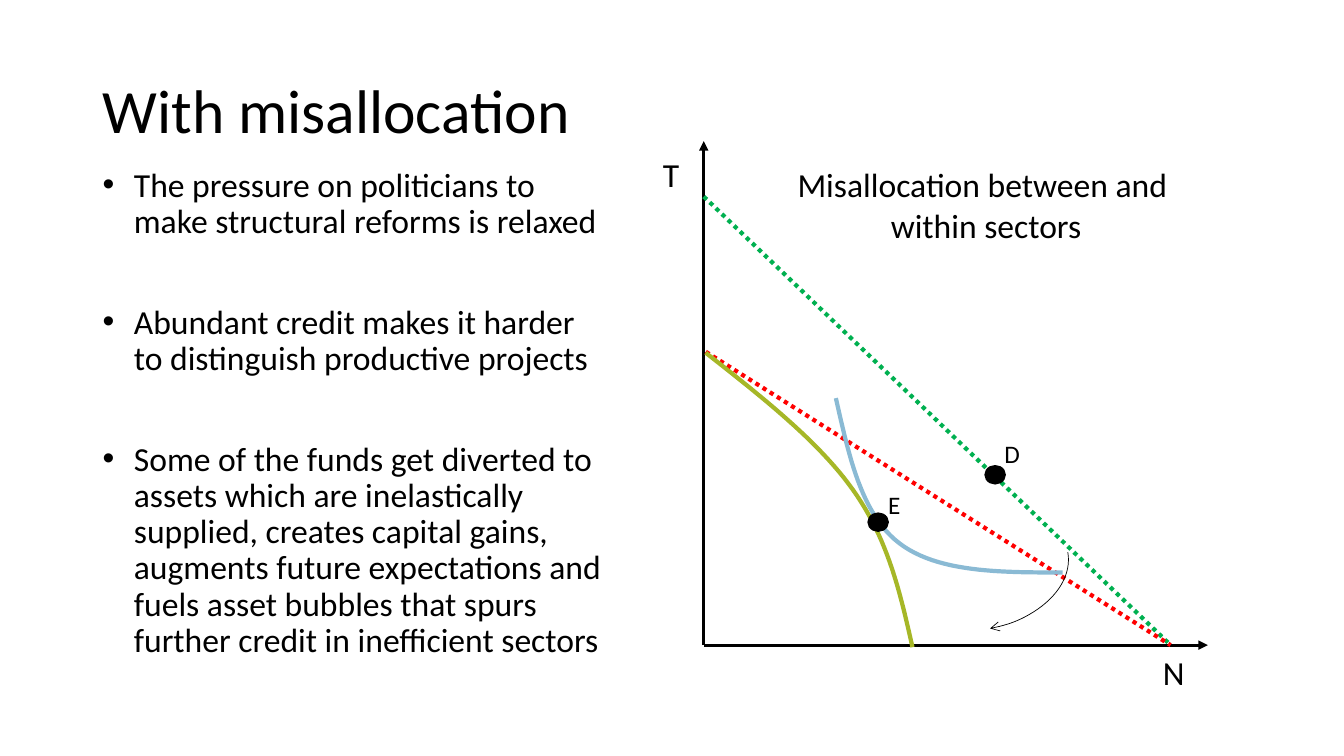
import lxml.etree
import pptx
import pptx.dml.color
import pptx.enum.dml
import pptx.enum.shapes
import pptx.enum.text
import pptx.oxml.ns
import pptx.util

BLACK = pptx.dml.color.RGBColor(0x00, 0x00, 0x00)
GREEN = pptx.dml.color.RGBColor(0x00, 0xB0, 0x50)
RED = pptx.dml.color.RGBColor(0xFF, 0x00, 0x00)
OLIVE = pptx.dml.color.RGBColor(0xA6, 0xB7, 0x27)
BLUE = pptx.dml.color.RGBColor(0x8A, 0xBA, 0xD4)
FONT = "Calibri"
DOT = pptx.enum.dml.MSO_LINE.ROUND_DOT
CENTER = pptx.enum.text.PP_ALIGN.CENTER
MIDDLE = pptx.enum.text.MSO_ANCHOR.MIDDLE
GROW = pptx.enum.text.MSO_AUTO_SIZE.SHAPE_TO_FIT_TEXT
SHAPE = pptx.enum.shapes.MSO_SHAPE

TITLE = "With misallocation"
BULLETS = [
    "The pressure on politicians to make structural reforms is relaxed",
    "Abundant credit makes it harder to distinguish productive projects",
    "Some of the funds get diverted to assets which are inelastically supplied, "
    "creates capital gains, augments future expectations and fuels asset bubbles "
    "that spurs further credit in inefficient sectors",
]
TITLE_BOX = (0.92, 0.4, 11.5, 1.45)
BULLET_BOX = (0.92, 1.62, 5.14, 5.56)

# Diagram positions are inches right of and above the origin of the axes.
ORIGIN = (6.98, 6.4)
LINES = [
    ((0, 0), (0, 5), BLACK, 2.25, None, "triangle"),
    ((0, 0), (5, 0), BLACK, 2.25, None, "triangle"),
    ((0, 4.45), (4.63, 0), GREEN, 3, DOT, None),
    ((0.02, 2.91), (4.63, 0), RED, 3, DOT, None),
]
CURVES = [
    ([(0.02, 2.9), (0.58, 2.46), (1.14, 2.02), (1.48, 1.54),
      (1.83, 1.05), (1.95, 0.51), (2.07, -0.02)], OLIVE),
    ([(1.31, 2.45), (1.44, 1.88), (1.56, 1.3), (1.94, 1.01),
      (2.32, 0.72), (2.94, 0.72), (3.56, 0.72)], BLUE),
]
ARC = {"center": (2.73, 0.76), "size": (1.21, 1.79), "turn": 79.6}
POINTS = [(2.89, 1.69), (1.73, 1.22)]
POINT_SIZE = (0.2, 0.18)
LABELS = [
    (["T"], (-0.51, 4.92), (0.37, 0.5), 24),
    (["N"], (4.45, -0.02), (0.42, 0.5), 24),
    (["D"], (2.88, 2.1), (0.36, 0.4), 18),
    (["E"], (1.73, 1.59), (0.32, 0.4), 18),
    (["Misallocation between and ", "within sectors"], (0.81, 4.82), (3.98, 0.91), 24),
]
STEPS = 24


def inches(values):
    return [pptx.util.Inches(v) for v in values]


def place(point):
    return inches((ORIGIN[0] + point[0], ORIGIN[1] - point[1]))


def centered(center, size):
    corner = (center[0] - size[0] / 2, center[1] + size[1] / 2)
    return place(corner) + inches(size)


def add_child(parent, tag, **attributes):
    return lxml.etree.SubElement(parent, pptx.oxml.ns.qn(tag), attributes)


def set_line(s, color, width, dash=None, tail=None):
    s.line.color.rgb = color
    s.line.width = pptx.util.Pt(width)
    if dash:
        s.line.dash_style = dash
    if tail:
        add_child(s.element.spPr.find(pptx.oxml.ns.qn("a:ln")), "a:tailEnd", type=tail)


def add_text(slide, box, lines, size, frame, paragraph):
    tf = slide.shapes.add_textbox(*box).text_frame
    for name, value in frame.items():
        setattr(tf, name, value)
    for i, line in enumerate(lines):
        p = tf.paragraphs[0] if i == 0 else tf.add_paragraph()
        for name, value in paragraph.items():
            setattr(p, name, value)
        r = p.add_run()
        r.text = line
        for name, value in {"name": FONT, "size": pptx.util.Pt(size)}.items():
            setattr(r.font, name, value)
        r.font.color.rgb = BLACK
    return tf


def bezier(points):
    for k in range(0, len(points) - 1, 3):
        a, b, c, d = points[k:k + 4]
        for step in range(1, STEPS + 1):
            t = step / STEPS
            u = 1 - t
            weights = (u ** 3, 3 * u * u * t, 3 * u * t * t, t ** 3)
            yield tuple(sum(w * q[axis] for w, q in zip(weights, (a, b, c, d)))
                        for axis in (0, 1))


def add_bullets(slide):
    tf = add_text(slide, inches(BULLET_BOX), BULLETS, 24, {"word_wrap": True},
                  {"line_spacing": 0.9, "space_before": pptx.util.Pt(46)})
    tf.paragraphs[0].space_before = pptx.util.Pt(10)
    indent = pptx.util.Inches(0.31)
    for p in tf.paragraphs:
        pPr = p._p.get_or_add_pPr()
        pPr.set("marL", str(indent))
        pPr.set("indent", str(-indent))
        add_child(pPr, "a:buFont", typeface="Arial")
        add_child(pPr, "a:buChar", char="•")


def add_diagram(slide):
    for start, end, *style in LINES:
        s = slide.shapes.add_connector(pptx.enum.shapes.MSO_CONNECTOR.STRAIGHT,
                                       *place(start), *place(end))
        set_line(s, *style)
        add_child(s.element.spPr, "a:effectLst")
    s = slide.shapes.add_shape(SHAPE.ARC, *centered(ARC["center"], ARC["size"]))
    s.rotation = ARC["turn"]
    s.shadow.inherit = False
    s.fill.background()
    set_line(s, BLACK, 0.5, tail="arrow")
    for points, color in CURVES:
        builder = slide.shapes.build_freeform(*place(points[0]))
        builder.add_line_segments([place(q) for q in bezier(points)], close=False)
        s = builder.convert_to_shape()
        s.shadow.inherit = False
        s.fill.background()
        set_line(s, color, 3)
    for point in POINTS:
        s = slide.shapes.add_shape(SHAPE.OVAL, *centered(point, POINT_SIZE))
        s.shadow.inherit = False
        s.fill.solid()
        s.fill.fore_color.rgb = BLACK
        set_line(s, BLACK, 1)
    for lines, corner, size, points in LABELS:
        add_text(slide, place(corner) + inches(size), lines, points,
                 {"word_wrap": False, "auto_size": GROW}, {"alignment": CENTER})


def main():
    prs = pptx.Presentation()
    prs.slide_width, prs.slide_height = inches((13.33, 7.5))
    slide = prs.slides.add_slide(prs.slide_layouts[6])
    add_text(slide, inches(TITLE_BOX), [TITLE], 44,
             {"word_wrap": True, "vertical_anchor": MIDDLE}, {"line_spacing": 0.9})
    add_bullets(slide)
    add_diagram(slide)
    prs.save("out.pptx")


if __name__ == "__main__":
    main()
